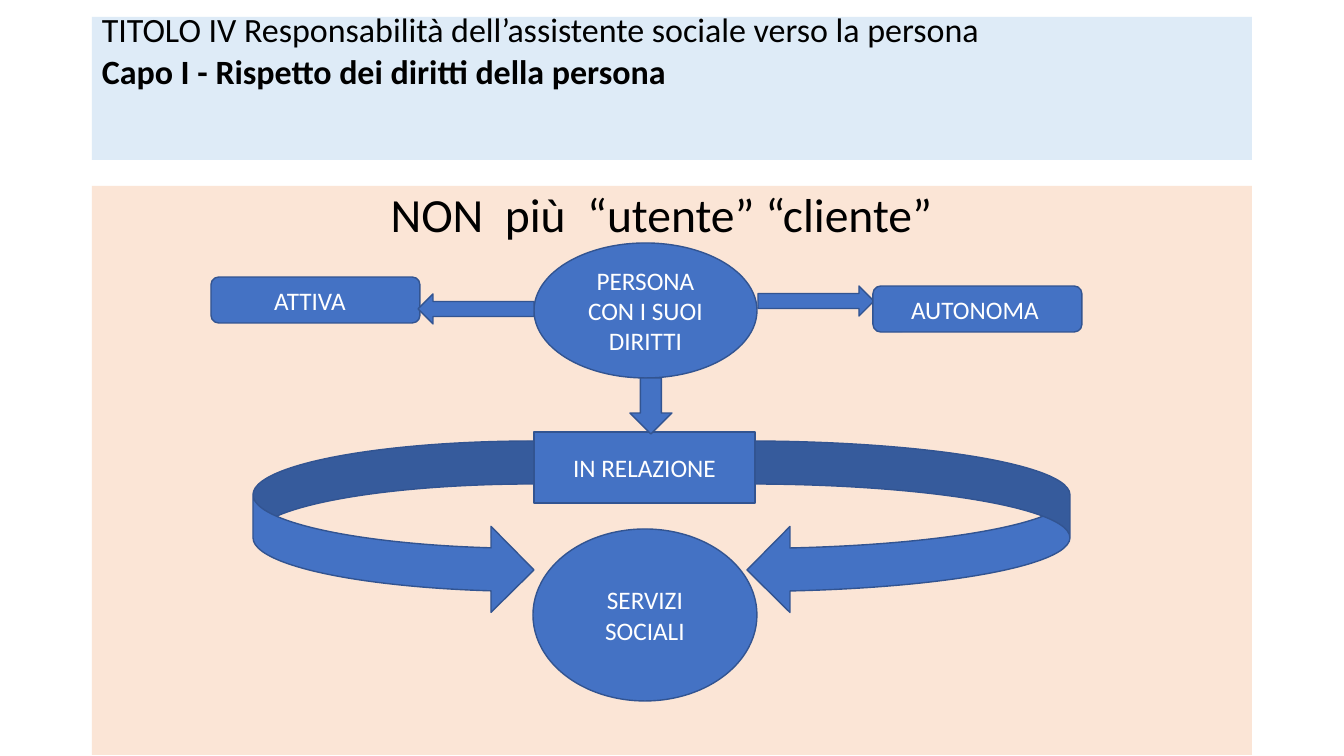
import pptx
import pptx.dml.color
import pptx.enum.shapes
import pptx.enum.text
import pptx.util

SHAPE = pptx.enum.shapes.MSO_SHAPE
ALIGN = pptx.enum.text.PP_ALIGN
ANCHOR = pptx.enum.text.MSO_ANCHOR
BLUE, OUTLINE = "4472C4", "325491"
BLACK, WHITE = "000000", "FFFFFF"


def px(n):
    """Turn whole pixels into EMU."""
    return pptx.util.Emu(round(n * 914400 / 100.8))


def rgb(value):
    """Turn a hex string into a colour."""
    return pptx.dml.color.RGBColor.from_string(value)


def add_shape(s, kind, box, fill=BLUE, line=OUTLINE, rotation=0):
    """Add a flat filled shape."""
    sp = s.shapes.add_shape(kind, *map(px, box))
    sp.shadow.inherit = False
    sp.rotation = rotation
    sp.fill.solid()
    sp.fill.fore_color.rgb = rgb(fill)
    if line:
        sp.line.color.rgb = rgb(line)
        sp.line.width = pptx.util.Pt(1)
    else:
        sp.line.fill.background()
    return sp


def write(sp, lines, size=18, color=WHITE, align=ALIGN.CENTER,
          anchor=ANCHOR.MIDDLE, spacing=1.0, right=10):
    """Write one paragraph per line into a shape."""
    tf = sp.text_frame
    tf.word_wrap = True
    tf.vertical_anchor = anchor
    tf.margin_left, tf.margin_right = px(10), px(right)
    tf.margin_top = tf.margin_bottom = px(5)
    tf.text = "\n".join(lines)
    for p in tf.paragraphs:
        p.alignment = align
        p.line_spacing = spacing
        for r in p.runs:
            r.font.name = "Calibri"
            r.font.size = pptx.util.Pt(size)
            r.font.color.rgb = rgb(color)
    return tf


def title_band(s, x, y, w, h):
    """Draw the heading band with its two lines."""
    sp = add_shape(s, SHAPE.RECTANGLE, (x, y, w, h), "DEEBF7", None)
    tf = write(sp, ["TITOLO IV Responsabilità dell’assistente sociale verso la persona",
                    "Capo I - Rispetto dei diritti della persona"],
               24.3, BLACK, ALIGN.LEFT, ANCHOR.TOP, 1.03)
    tf.margin_top = px(-10)
    tf.paragraphs[1].runs[0].font.bold = True


def concept_panel(s, x, y, w, h):
    """Draw the panel that links the person to the social services."""
    panel = add_shape(s, SHAPE.RECTANGLE, (x, y, w, h), "FBE5D6", None)
    write(panel, ["NON  più  “utente” “cliente”"], 34, BLACK,
          anchor=ANCHOR.TOP, spacing=0.9, right=31)
    parts = [
        (SHAPE.FLOWCHART_CONNECTOR, (442, 57, 223, 135), 0, ["PERSONA", "CON I SUOI DIRITTI"], 10),
        (SHAPE.LEFT_ARROW, (666, 100, 116, 30), 180, None, 0),
        (SHAPE.ROUNDED_RECTANGLE, (781, 100, 209, 46), 0, ["AUTONOMA"], 15),
        (SHAPE.ROUNDED_RECTANGLE, (119, 91, 209, 46), 0, ["ATTIVA"], 21),
        (SHAPE.LEFT_ARROW, (326, 108, 116, 30), 0, None, 0),
        (SHAPE.CURVED_RIGHT_ARROW, (161, 255, 281, 172), 0, None, 0),
        (SHAPE.CURVED_LEFT_ARROW, (655, 255, 323, 172), 0, None, 0),
        (SHAPE.RECTANGLE, (442, 246, 221, 71), 0, ["IN RELAZIONE"], 10),
        (SHAPE.LEFT_ARROW, (531, 199, 56, 42), 270, None, 0),
        (SHAPE.OVAL, (441, 343, 224, 172), 0, ["SERVIZI SOCIALI"], 10),
    ]
    for kind, (dx, dy, pw, ph), rotation, lines, right in parts:
        sp = add_shape(s, kind, (x + dx, y + dy, pw, ph), rotation=rotation)
        if lines:
            write(sp, lines, right=right)


def main():
    """Build and save the slide."""
    prs = pptx.Presentation()
    prs.slide_width, prs.slide_height = px(1344), px(756)
    s = prs.slides.add_slide(prs.slide_layouts[6])
    title_band(s, 92, 17, 1160, 143)
    concept_panel(s, 92, 186, 1160, 569)
    prs.save("out.pptx")


if __name__ == "__main__":
    main()
